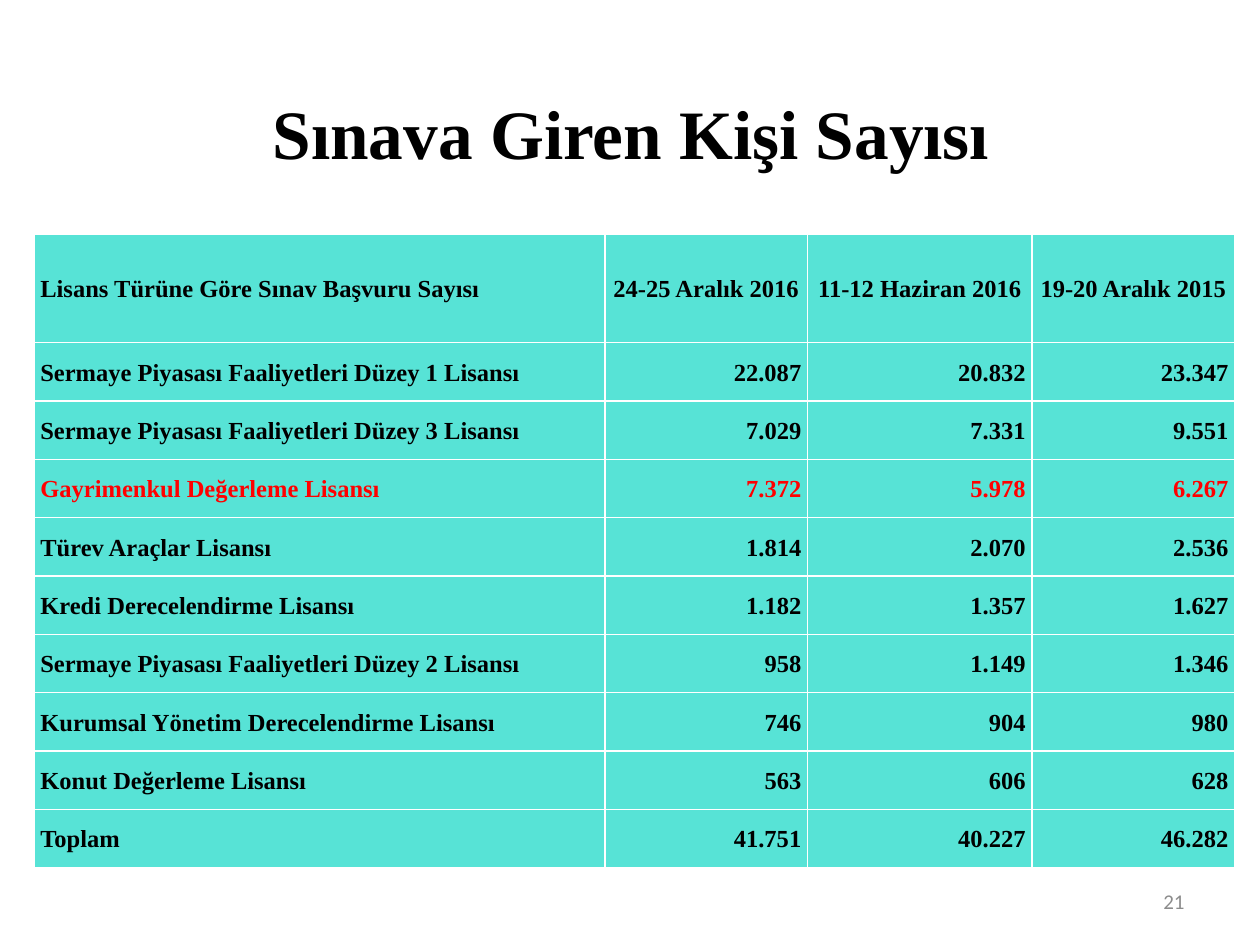
import pptx
import pptx.dml.color
import pptx.enum.text
import pptx.util

Inches = pptx.util.Inches
ALIGN = pptx.enum.text.PP_ALIGN
ANCHOR = pptx.enum.text.MSO_ANCHOR

COLORS = {"text": "000000", "highlight": "FF0000", "cell": "57E3D6", "number": "8C8C8C"}
HEADER = ["Lisans Türüne Göre Sınav Başvuru Sayısı",
          "24-25 Aralık 2016", "11-12 Haziran 2016", "19-20 Aralık 2015"]
LICENCES = [
    ["Sermaye Piyasası Faaliyetleri Düzey 1 Lisansı", "22.087", "20.832", "23.347"],
    ["Sermaye Piyasası Faaliyetleri Düzey 3 Lisansı", "7.029", "7.331", "9.551"],
    ["Gayrimenkul Değerleme Lisansı", "7.372", "5.978", "6.267"],
    ["Türev Araçlar Lisansı", "1.814", "2.070", "2.536"],
    ["Kredi Derecelendirme Lisansı", "1.182", "1.357", "1.627"],
    ["Sermaye Piyasası Faaliyetleri Düzey 2 Lisansı", "958", "1.149", "1.346"],
    ["Kurumsal Yönetim Derecelendirme Lisansı", "746", "904", "980"],
    ["Konut Değerleme Lisansı", "563", "606", "628"],
    ["Toplam", "41.751", "40.227", "46.282"],
]
HIGHLIGHTED = "Gayrimenkul Değerleme Lisansı"
COLUMN_WIDTHS = [4.53, 1.61, 1.78, 1.61]
HEADER_HEIGHT = 0.86
BODY_HEIGHT = 4.17


class SlideBuilder:
    font = "Times New Roman"

    def __init__(self, slide):
        self.slide = slide

    def set_text(self, text_frame, text, size, color="text", align=ALIGN.LEFT,
                 bold=True, font=None):
        text_frame.text = text
        paragraph = text_frame.paragraphs[0]
        paragraph.alignment = align
        for run in paragraph.runs:
            run.font.name = font or self.font
            run.font.size = pptx.util.Pt(size)
            run.font.bold = bold
            run.font.color.rgb = pptx.dml.color.RGBColor.from_string(COLORS[color])
        return paragraph

    def title(self, text, left, top, width, height):
        shape = self.slide.shapes.title
        shape.left, shape.top = Inches(left), Inches(top)
        shape.width, shape.height = Inches(width), Inches(height)
        text_frame = shape.text_frame
        text_frame.auto_size = pptx.enum.text.MSO_AUTO_SIZE.NONE
        text_frame.vertical_anchor = ANCHOR.BOTTOM
        self.set_text(text_frame, text, 39.6, align=ALIGN.CENTER)

    def cell(self, cell, text, color, align):
        cell.fill.solid()
        cell.fill.fore_color.rgb = pptx.dml.color.RGBColor.from_string(COLORS["cell"])
        cell.vertical_anchor = ANCHOR.MIDDLE
        cell.margin_left = cell.margin_right = Inches(0.05)
        cell.margin_top = cell.margin_bottom = 0
        self.set_text(cell.text_frame, text, 14, color, align).line_spacing = 1.07

    def table(self, header, body, left, top):
        rows = [header] + body
        table = self.slide.shapes.add_table(
            len(rows), len(header), Inches(left), Inches(top),
            Inches(sum(COLUMN_WIDTHS)), Inches(HEADER_HEIGHT + BODY_HEIGHT)).table
        table.horz_banding = False
        for column, width in zip(table.columns, COLUMN_WIDTHS):
            column.width = Inches(width)
        for row_index, values in enumerate(rows):
            is_header = row_index == 0
            height = HEADER_HEIGHT if is_header else BODY_HEIGHT / len(body)
            table.rows[row_index].height = Inches(height)
            color = "highlight" if values[0] == HIGHLIGHTED else "text"
            first_align = ALIGN.LEFT if is_header else ALIGN.JUSTIFY
            other_align = ALIGN.CENTER if is_header else ALIGN.RIGHT
            for column_index, text in enumerate(values):
                align = other_align if column_index else first_align
                self.cell(table.cell(row_index, column_index), text, color, align)

    def page_number(self, text, left, top, width, height):
        shape = self.slide.shapes.add_textbox(
            Inches(left), Inches(top), Inches(width), Inches(height))
        shape.text_frame.word_wrap = True
        shape.text_frame.vertical_anchor = ANCHOR.MIDDLE
        self.set_text(shape.text_frame, text, 12, "number", ALIGN.RIGHT, False, "Calibri")


def main():
    presentation = pptx.Presentation()
    presentation.slide_width, presentation.slide_height = Inches(10), Inches(7.5)
    builder = SlideBuilder(presentation.slides.add_slide(presentation.slide_layouts[5]))
    builder.table(HEADER, LICENCES, 0.27, 1.86)
    builder.title("Sınava Giren Kişi Sayısı", 0.51, 1.27, 9, 0.16)
    builder.page_number("21", 7.17, 6.95, 2.33, 0.4)
    presentation.save("out.pptx")


if __name__ == "__main__":
    main()
